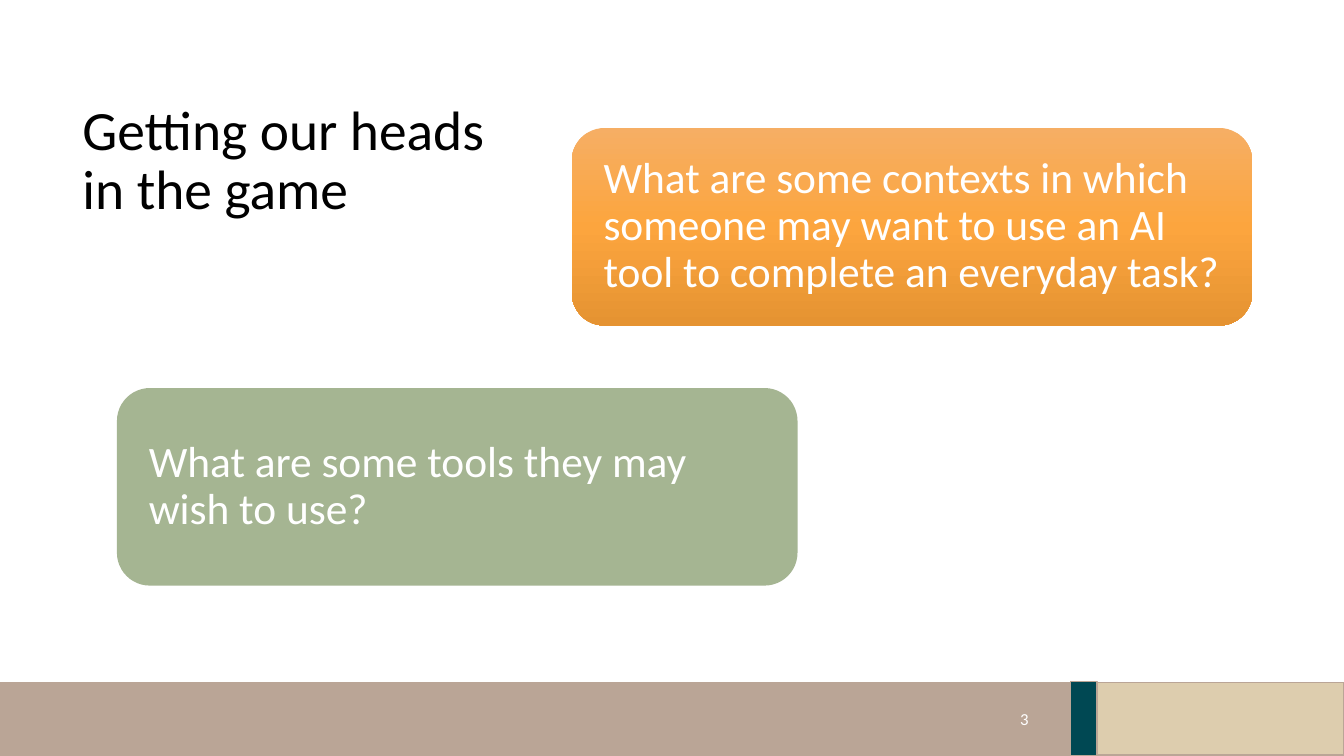
from copy import deepcopy

from pptx import Presentation
from pptx.dml.color import RGBColor
from pptx.enum.shapes import MSO_SHAPE as Shape
from pptx.enum.text import MSO_ANCHOR as Anchor, PP_ALIGN as Align
from pptx.oxml.ns import qn
from pptx.util import Inches, Pt

WIDE, HIGH = 13.33, 7.5
HEX = {
    "ink": "000000", "white": "FFFFFF", "sage": "A5B592",
    "taupe": "BAA596", "sand": "DDCDAE", "teal": "004853",
    "peach": "F6AE64", "orange": "FCA53E", "amber": "E59332",
}


def tint(name):
    """Return the named colour."""
    return RGBColor.from_string(HEX[name])


def block(slide, box, kind, fills):
    """Add a shape with a solid fill or a downward gradient."""
    shape = slide.shapes.add_shape(kind, *map(Inches, box))
    shape.shadow.inherit = False
    shape.line.fill.background()
    if len(fills) == 1:
        shape.fill.solid()
        shape.fill.fore_color.rgb = tint(fills[0])
        return shape
    shape.fill.gradient()
    shape.fill.gradient_angle = 270
    stops = shape._element.spPr.find(qn("a:gradFill")).find(qn("a:gsLst"))
    while len(stops) < len(fills):
        stops.append(deepcopy(stops[0]))
    for i, (stop, name) in enumerate(zip(shape.fill.gradient_stops, fills)):
        stop.position = i / (len(fills) - 1)
        stop.color.rgb = tint(name)
    return shape


def write(shape, text, size, color, anchor=Anchor.MIDDLE, align=Align.LEFT, pitch=0.9):
    """Set one wrapped paragraph in a shape."""
    frame = shape.text_frame
    frame.word_wrap = True
    frame.vertical_anchor = anchor
    para = frame.paragraphs[0]
    para.text = text
    para.alignment = align
    para.line_spacing = pitch
    font = para.font
    font.name, font.size = "Calibri", Pt(size)
    font.color.rgb = tint(color)


def title(slide, box, text):
    """Add the slide title, resting on the bottom of its box."""
    label = slide.shapes.add_textbox(*map(Inches, box))
    write(label, text, 39.6, "ink", Anchor.BOTTOM)


def card(slide, box, text, fills):
    """Add a rounded question card."""
    shape = block(slide, box, Shape.ROUNDED_RECTANGLE, fills)
    frame = shape.text_frame
    frame.margin_left = frame.margin_right = Inches(0.22)
    write(shape, text, 31, "white")


def footer(slide, box, number):
    """Add the three footer bars and the page number."""
    left, top, width, height = box
    wide, thin = 10.62, 0.26
    rest = width - wide - thin
    bars = [
        ("taupe", left, top, wide, height),
        ("sand", left + wide + thin, top, rest, height),
        ("teal", left + wide, top - 0.01, thin, height + 0.02),
    ]
    for name, *place in bars:
        bar = block(slide, place, Shape.RECTANGLE, [name])
        bar.line.color.rgb = tint("taupe")
        bar.line.width = Pt(1)
    place = (left + 9.83, top + 0.16, 0.47, 0.4)
    label = slide.shapes.add_textbox(*map(Inches, place))
    write(label, number, 12, "white", align=Align.RIGHT, pitch=1.0)


def main():
    """Build and save the slide."""
    deck = Presentation()
    deck.slide_width, deck.slide_height = Inches(WIDE), Inches(HIGH)
    slide = deck.slides.add_slide(deck.slide_layouts[6])
    footer(slide, (0, 6.77, WIDE, 0.72), "3")
    title(slide, (0.72, 0.5, 4.5, 1.75), "Getting our heads in the game")
    size = (6.75, 1.96)
    card(slide, (5.67, 1.27, *size),
         "What are some contexts in which someone may want to use an AI tool "
         "to complete an everyday task?", ["peach", "orange", "amber"])
    card(slide, (1.16, 3.85, *size),
         "What are some tools they may wish to use?", ["sage"])
    deck.save("out.pptx")


if __name__ == "__main__":
    main()
